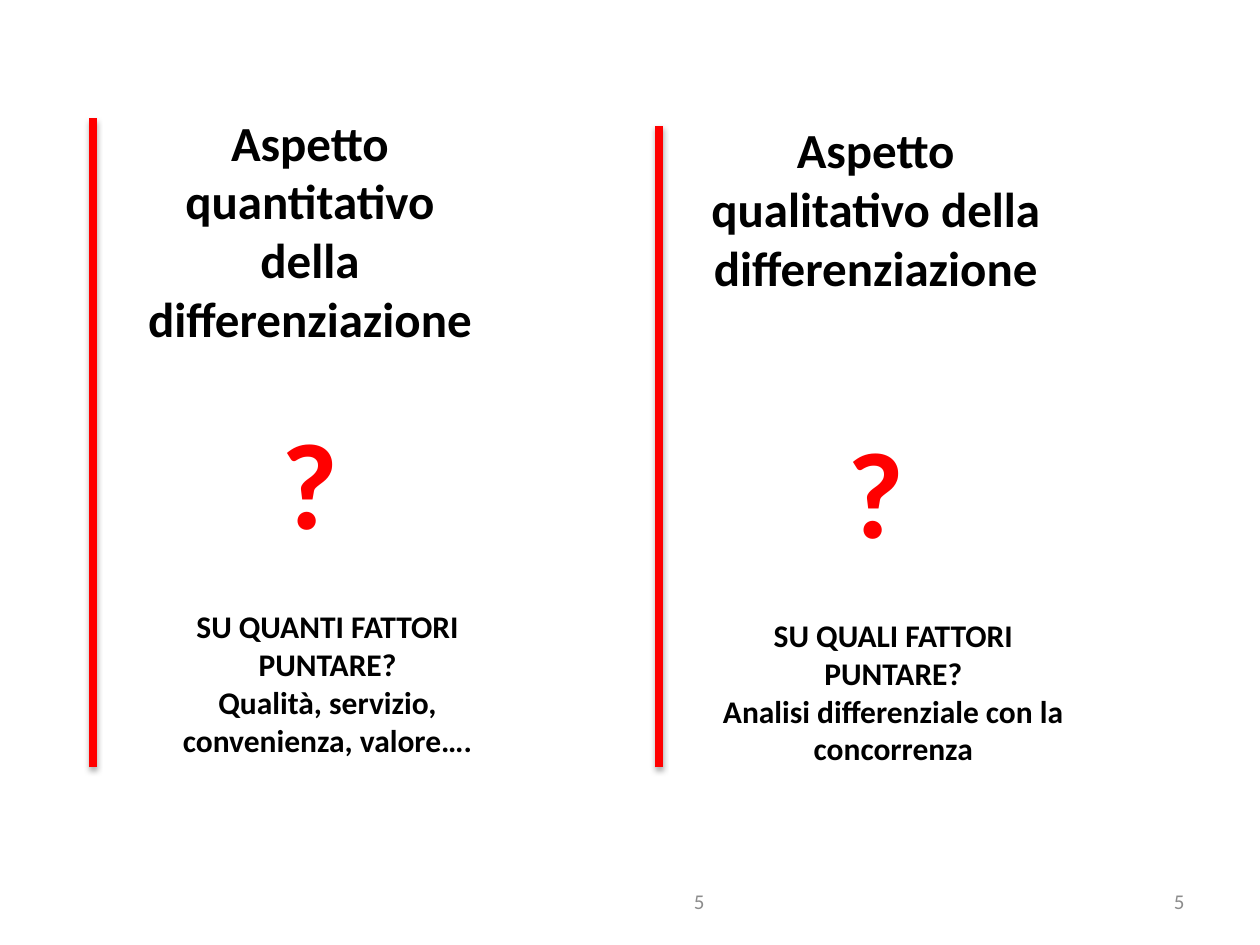
from dataclasses import dataclass

from lxml import etree
from pptx import Presentation
from pptx.dml.color import RGBColor
from pptx.enum.shapes import MSO_CONNECTOR
from pptx.enum.text import MSO_ANCHOR, MSO_AUTO_SIZE, PP_ALIGN
from pptx.oxml.ns import nsdecls
from pptx.shapes.connector import Connector
from pptx.slide import Slide
from pptx.util import Inches, Pt

RED = RGBColor(0xFF, 0x00, 0x00)
BLACK = RGBColor(0x00, 0x00, 0x00)
GREY = RGBColor(0x8C, 0x8C, 0x8C)
FONT = "Calibri"
CENTER, RIGHT = PP_ALIGN.CENTER, PP_ALIGN.RIGHT
TOP, MIDDLE = MSO_ANCHOR.TOP, MSO_ANCHOR.MIDDLE
GROW, FIXED = MSO_AUTO_SIZE.SHAPE_TO_FIT_TEXT, MSO_AUTO_SIZE.NONE
STRAIGHT = MSO_CONNECTOR.STRAIGHT
HEADING_LINE = 34.2
BAR_BOTTOM = 6.09
SHADOW = (
    f'<a:effectLst {nsdecls("a")}>'
    '<a:outerShdw blurRad="40000" dist="23000" dir="5400000" rotWithShape="0">'
    '<a:srgbClr val="000000"><a:alpha val="35000"/></a:srgbClr>'
    '</a:outerShdw></a:effectLst>'
)


@dataclass
class Para:
    text: str
    size: float
    color: RGBColor = BLACK
    bold: bool = True
    align: PP_ALIGN = CENTER
    before: float = 0


@dataclass
class Aspect:
    bar_x: float
    bar_top: float
    heading_top: float
    question_gap: float
    factors_top: float
    factors_height: float
    heading: str
    question: str
    answer: str


ASPECTS = [
    Aspect(0.74, 0.94, 0.84, HEADING_LINE, 4.77, 1.31,
           "Aspetto quantitativo della differenziazione",
           "SU QUANTI FATTORI PUNTARE?", "Qualità, servizio, convenienza, valore…."),
    Aspect(5.23, 1, 0.9, 2 * HEADING_LINE, 4.84, 1.62,
           "Aspetto qualitativo della differenziazione",
           "SU QUALI FATTORI PUNTARE?", "Analisi differenziale con la concorrenza"),
]


def add_text(s: Slide, x: float, y: float, w: float, h: float, paras: list[Para],
             anchor: MSO_ANCHOR = TOP, fit: MSO_AUTO_SIZE = GROW) -> None:
    tf = s.shapes.add_textbox(Inches(x), Inches(y), Inches(w), Inches(h)).text_frame
    tf.word_wrap = True
    tf.auto_size = fit
    tf.vertical_anchor = anchor
    for i, para in enumerate(paras):
        p = tf.add_paragraph() if i else tf.paragraphs[0]
        p.text = para.text
        p.alignment = para.align
        p.space_before = Pt(para.before)
        p.font.name = FONT
        p.font.size = Pt(para.size)
        p.font.bold = para.bold
        p.font.color.rgb = para.color


def add_bar(s: Slide, x: float, top: float) -> Connector:
    bar = s.shapes.add_connector(STRAIGHT, Inches(x), Inches(BAR_BOTTOM), Inches(x), Inches(top))
    bar.line.color.rgb = RED
    bar.line.width = Pt(4.5)
    bar._element.spPr.append(etree.fromstring(SHADOW))
    return bar


def add_aspect(s: Slide, a: Aspect) -> None:
    text_x = a.bar_x + 0.24
    add_text(s, text_x, a.heading_top, 2.96, 3.64,
             [Para(a.heading, 28), Para("?", 70, RED, before=a.question_gap)])
    add_bar(s, a.bar_x, a.bar_top)
    add_text(s, text_x, a.factors_top, 3.24, a.factors_height,
             [Para(a.question, 18), Para(a.answer, 18)])


def main() -> None:
    """Build the slide on the two aspects of differentiation."""
    prs = Presentation()
    prs.slide_width, prs.slide_height = Inches(10), Inches(7.5)
    s = prs.slides.add_slide(prs.slide_layouts[6])
    for x in (7.17, 3.36):
        add_text(s, x, 6.95, 2.33, 0.4, [Para("5", 12, GREY, False, RIGHT)], MIDDLE, FIXED)
    for aspect in ASPECTS:
        add_aspect(s, aspect)
    prs.save("out.pptx")


if __name__ == "__main__":
    main()
